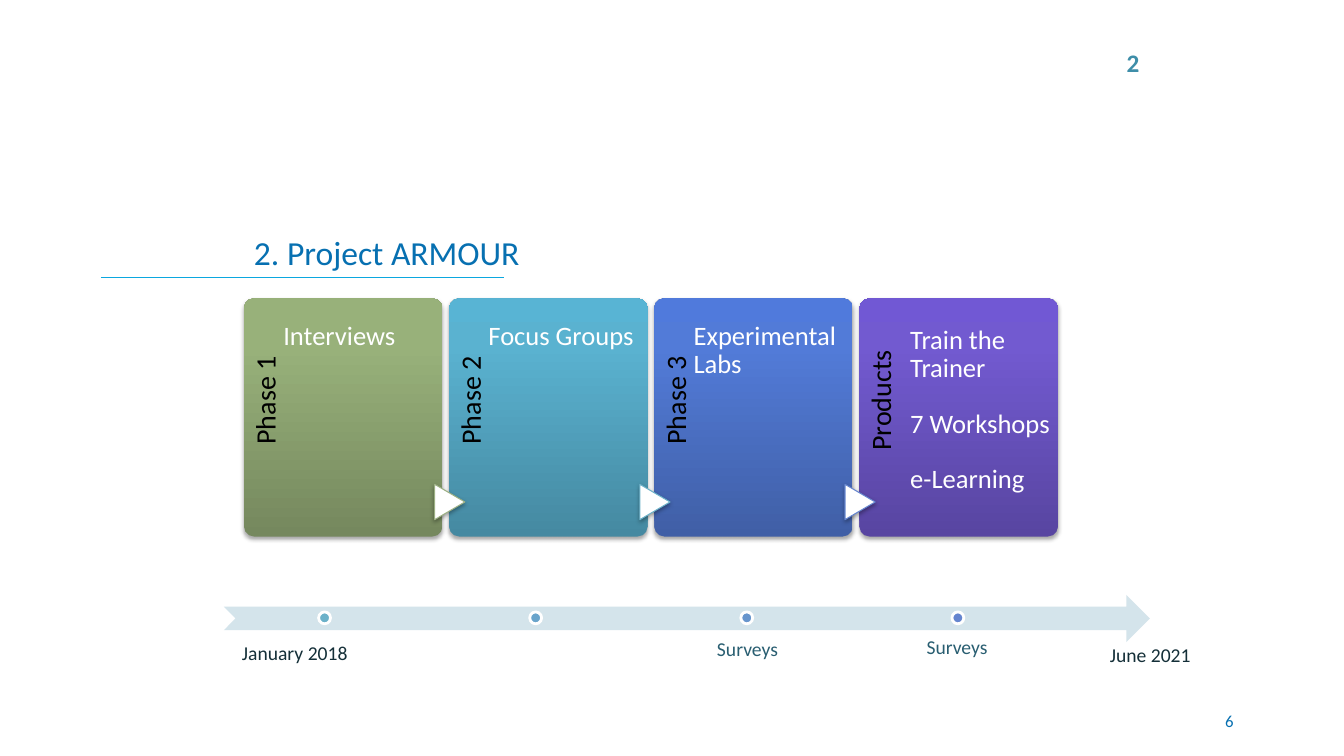
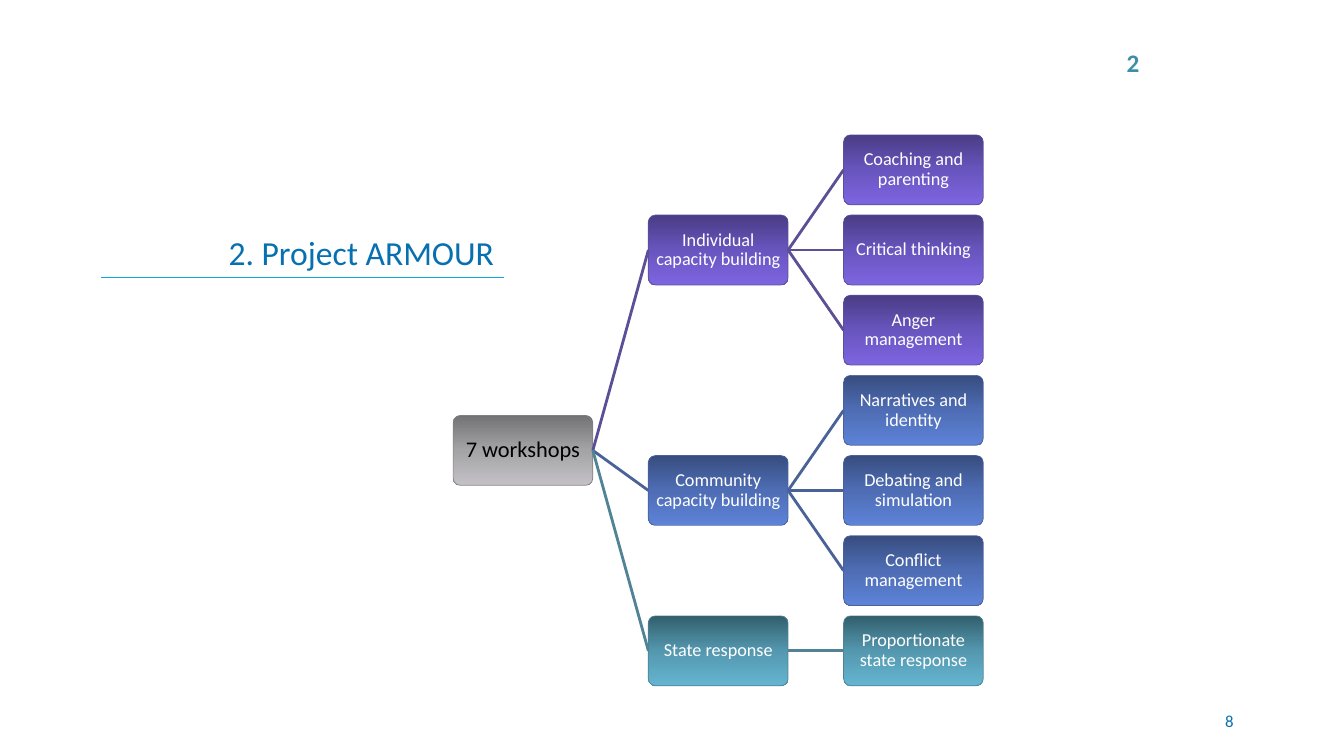
import pptx
import pptx.util
import pptx.dml.color
import pptx.enum.shapes
import pptx.enum.text
import pptx.oxml
import pptx.oxml.ns
from lxml import etree

Cm, Pt = pptx.util.Cm, pptx.util.Pt
RGB = pptx.dml.color.RGBColor.from_string
SHAPE = pptx.enum.shapes.MSO_SHAPE
STRAIGHT = pptx.enum.shapes.MSO_CONNECTOR.STRAIGHT
ALIGN = pptx.enum.text.PP_ALIGN
ANCHOR = pptx.enum.text.MSO_ANCHOR
qn = pptx.oxml.ns.qn

COLORS = {
    "title": "0770B1", "rule": "0BA7DF", "section": "3E8EA9",
    "black": "000000", "white": "FFFFFF",
    "arrow": "D4E4EB", "date": "142F38", "survey": "295E71",
}
FONT = "Calibri"
TITLE = "2. Project ARMOUR"
SECTION = "2"

# label, body lines, gradient, body offset, body top inset (cm)
PHASES = [
    ("Phase 1", ["Interviews"], ("75885E", "98B17A", "99B379"), 0.99, 0.6),
    ("Phase 2", ["Focus Groups"], ("4589A1", "5AB2D0", "58B4D4"), 0.99, 0.6),
    ("Phase 3", ["Experimental Labs"], ("405FA6", "527BD8", "507ADC"), 0.99, 0.6),
    ("Products", ["Train the Trainer", "7 Workshops", "e-Learning"],
     ("5845A1", "725AD0", "7158D4"), 1.28, 0.7),
]
MARKER_LINES = ["9CB084", "6BB1C9", "6585CF"]
DOTS = ["6BB1C9", "69A4CB", "6795CD", "6585CF"]
# text, left, top (cm), colour
TIMELINE_LABELS = [
    ("January 2018", 5.74, 16.03, "date"),
    ("June 2021", 27.3, 16.08, "date"),
    ("Surveys", 17.15, 15.93, "survey"),
    ("Surveys", 22.43, 15.88, "survey"),
]

THEMES = {
    "root": {"stops": ("737375", "A4A3A6", "C3C1C5"), "line": "808080"},
    "purple": {"stops": ("4A3C85", "6955BE", "7D65E1"), "line": "5D4F95"},
    "blue": {"stops": ("374D7F", "4E6DB5", "5D82D7"), "line": "4B6299"},
    "teal": {"stops": ("325E6C", "5498AF", "64B4D0"), "line": "4F8395"},
}
ROOT = "7 workshops"
BRANCHES = [
    ("Individual capacity building", "purple",
     ["Coaching and parenting", "Critical thinking", "Anger management"]),
    ("Community capacity building", "blue",
     ["Narratives and identity", "Debating and simulation", "Conflict management"]),
    ("State response", "teal", ["Proportionate state response"]),
]


def write(shape, lines, size, color, align=ALIGN.LEFT, anchor=ANCHOR.TOP, bold=False,
          insets=(0.25, 0.13, 0.25, 0.13), spacing=None, gap=0, wrap=True):
    tf = shape.text_frame
    left, top, right, bottom = map(Cm, insets)
    frame = {"word_wrap": wrap, "auto_size": pptx.enum.text.MSO_AUTO_SIZE.NONE,
             "vertical_anchor": anchor, "margin_left": left, "margin_top": top,
             "margin_right": right, "margin_bottom": bottom}
    for name, value in frame.items():
        setattr(tf, name, value)
    for i, line in enumerate(lines):
        p = tf.paragraphs[0] if i == 0 else tf.add_paragraph()
        p.alignment = align
        if spacing:
            p.line_spacing = spacing
        if i:
            p.space_before = Pt(gap)
        r = p.add_run()
        r.text = line
        for name, value in {"name": FONT, "size": Pt(size), "bold": bold}.items():
            setattr(r.font, name, value)
        r.font.color.rgb = RGB(color)


def add_text(s, box, lines, size, color, **options):
    sp = s.shapes.add_textbox(*map(Cm, box))
    write(sp, lines, size, color, **options)
    return sp


def add_box(s, kind, box, fill=None, line=None, width=0.75):
    sp = s.shapes.add_shape(kind, *map(Cm, box))
    sp.shadow.inherit = False
    if fill:
        sp.fill.solid()
        sp.fill.fore_color.rgb = RGB(fill)
    if line:
        sp.line.color.rgb = RGB(line)
        sp.line.width = Pt(width)
    else:
        sp.line.fill.background()
    return sp


def set_gradient(sp, colors, middle, angle):
    """Three-stop gradient; angle is counter-clockwise, middle a percentage."""
    sp.fill.gradient()
    sp.fill.gradient_angle = angle
    stops = sp._element.spPr.find(".//" + qn("a:gsLst"))
    for stop in list(stops):
        stops.remove(stop)
    for pos, color in zip((0, middle, 100), colors):
        stop = etree.SubElement(stops, qn("a:gs"), pos=str(pos * 1000))
        etree.SubElement(stop, qn("a:srgbClr"), val=color)


def add_shadow(sp):
    effects = sp._element.spPr.find(qn("a:effectLst"))
    shadow = etree.SubElement(effects, qn("a:outerShdw"), blurRad=str(Pt(3.1)),
                              dist=str(Pt(1.8)), dir="5400000", rotWithShape="0")
    color = etree.SubElement(shadow, qn("a:srgbClr"), val=COLORS["black"])
    etree.SubElement(color, qn("a:alpha"), val="35000")


def add_line(s, color, width, ends=(0, 0, 0, 0)):
    line = s.shapes.add_connector(STRAIGHT, *map(Cm, ends))
    line.line.color.rgb = RGB(color)
    line.line.width = Pt(width)
    etree.SubElement(line._element.spPr, qn("a:effectLst"))
    return line


def add_slide(prs, number, title_left, title_width):
    s = prs.slides.add_slide(prs.slide_layouts[5])
    add_line(s, COLORS["rule"], 0.75, (2.54, 6.99, 12.7, 6.99))
    title = s.shapes.title
    place = {"left": title_left, "top": 4.01, "width": title_width, "height": 2.97}
    for name, value in place.items():
        setattr(title, name, Cm(value))
    write(title, [TITLE], 24, COLORS["title"], anchor=ANCHOR.BOTTOM)
    add_text(s, (24.28, 17.65, 7.06, 1.02), [number], 12, COLORS["title"],
             align=ALIGN.RIGHT, anchor=ANCHOR.MIDDLE)
    add_text(s, (28.14, 1.07, 0.84, 1.02), [SECTION], 18, COLORS["section"],
             bold=True, wrap=False)
    return s


def add_phases(s):
    left, top, step = 6.15, 7.52, 5.17
    for i, (label, lines, colors, offset, inset) in enumerate(PHASES):
        x = left + i * step
        card = add_box(s, SHAPE.ROUNDED_RECTANGLE, (x, top, 5, 6))
        card.adjustments[0] = 0.05
        set_gradient(card, colors, 80, 90)
        add_shadow(card)
        tag = add_text(s, (x - 1.96, 9.47, 4.93, 0.99), [label], 20, COLORS["black"],
                       align=ALIGN.CENTER, insets=(0, 0.18, 0.25, 0), spacing=0.9)
        tag.rotation = 270
        add_text(s, (x + offset, top, 3.73, 6), lines, 19, COLORS["white"],
                 insets=(0, inset, 0, 0), spacing=0.9, gap=19)
    for i, color in enumerate(MARKER_LINES, 1):
        marker = add_box(s, SHAPE.FLOWCHART_EXTRACT,
                         (left + i * step - 0.43, 12.27, 0.89, 0.76),
                         COLORS["white"], color)
        marker.rotation = 90
        add_shadow(marker)


def add_timeline(s):
    add_box(s, SHAPE.NOTCHED_RIGHT_ARROW, (5.64, 14.99, 23.34, 1.19), COLORS["arrow"])
    for i, color in enumerate(DOTS):
        add_box(s, SHAPE.OVAL, (8.03 + i * 5.32, 15.42, 0.3, 0.3),
                color, COLORS["white"], 2)
    for text, left, top, color in TIMELINE_LABELS:
        add_text(s, (left, top, 3.38, 0.86), [text], 14, COLORS[color],
                 align=ALIGN.CENTER)


def add_node(s, text, column, row, theme, size=13, color="white"):
    box = (11.42 + column * 4.92, 3.4 + row * 2.02, 3.52, 1.76)
    sp = add_box(s, SHAPE.ROUNDED_RECTANGLE, box, line=THEMES[theme]["line"], width=0.5)
    sp.adjustments[0] = 0.1
    set_gradient(sp, THEMES[theme]["stops"], 50, 270)
    write(sp, [text], size, COLORS[color], align=ALIGN.CENTER, anchor=ANCHOR.MIDDLE,
          insets=(0.08,) * 4, spacing=0.9)
    return sp


def link(s, parent, child, theme):
    line = add_line(s, THEMES[theme]["line"], 2)
    line.begin_connect(parent, 3)
    line.end_connect(child, 1)


def add_tree(s):
    """Each parent sits halfway between its first and last child."""
    rows, first = [], 0
    for _, _, leaves in BRANCHES:
        rows.append(first + (len(leaves) - 1) / 2)
        first += len(leaves)
    root = add_node(s, ROOT, 0, (rows[0] + rows[-1]) / 2, "root", 16, "black")
    leaf_row = 0
    for (text, theme, leaves), row in zip(BRANCHES, rows):
        branch = add_node(s, text, 1, row, theme)
        link(s, root, branch, theme)
        for leaf in leaves:
            link(s, branch, add_node(s, leaf, 2, leaf_row, theme), theme)
            leaf_row += 1


def main():
    prs = pptx.Presentation()
    prs.slide_width, prs.slide_height = Cm(33.87), Cm(19.05)
    s = add_slide(prs, "6", 6.15, 8.69)
    add_phases(s)
    add_timeline(s)
    add_tree(add_slide(prs, "8", 5.51, 9.09))
    prs.save("out.pptx")


if __name__ == "__main__":
    main()
